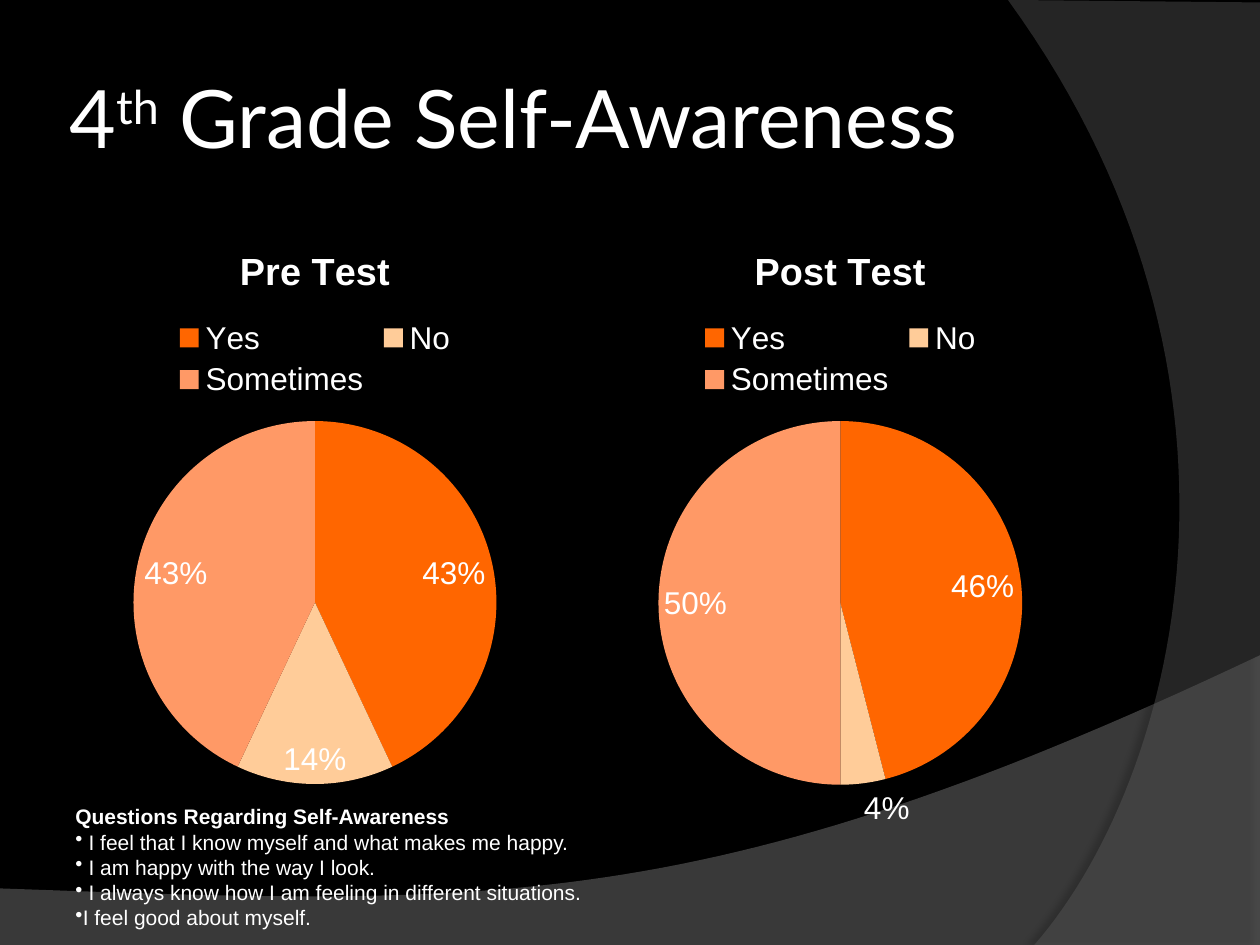
from lxml import etree
from pptx import Presentation
from pptx.chart.data import CategoryChartData
from pptx.dml.color import RGBColor
from pptx.enum.chart import XL_CHART_TYPE, XL_LABEL_POSITION, XL_LEGEND_POSITION
from pptx.enum.text import MSO_ANCHOR, MSO_AUTO_SIZE, PP_ALIGN
from pptx.oxml import parse_xml
from pptx.oxml.ns import nsdecls, qn
from pptx.util import Cm, Pt

PIE = XL_CHART_TYPE.PIE
BEST_FIT = XL_LABEL_POSITION.BEST_FIT
LEGEND_TOP = XL_LEGEND_POSITION.TOP
MIDDLE = MSO_ANCHOR.MIDDLE
GROW = MSO_AUTO_SIZE.SHAPE_TO_FIT_TEXT
LEFT = PP_ALIGN.LEFT

THEME = {
    "background": RGBColor(0x00, 0x00, 0x00),
    "text": RGBColor(0xFF, 0xFF, 0xFF),
    "wave": RGBColor(0x7F, 0x7F, 0x7F),
    "arc": RGBColor(0x5E, 0x5E, 0x5E),
    "slices": [RGBColor(0xFF, 0x66, 0x00), RGBColor(0xFF, 0xCC, 0x99), RGBColor(0xFF, 0x99, 0x66)],
    "title_font": "Lato",
    "body_font": "Arial",
    "title_size": Pt(46),
    "chart_title_size": Pt(21.6),
    "chart_size": Pt(18),
    "question_size": Pt(12),
}
CURVE_STEPS = 60


def style_font(font, name, size, bold=False):
    font.name = name
    font.size = size
    font.bold = bold
    font.color.rgb = THEME["text"]


def add_backdrop(page, corners, controls, color, opacity, shadow):
    start, first, second, end = corners[-1], *controls
    points = list(corners)
    for step in range(1, CURVE_STEPS + 1):
        t = step / CURVE_STEPS
        weights = ((1 - t) ** 3, 3 * t * (1 - t) ** 2, 3 * t ** 2 * (1 - t), t ** 3)
        points.append(tuple(
            sum(weight * value for weight, value in zip(weights, axis))
            for axis in zip(start, first, second, end)
        ))
    points = [(Cm(x), Cm(y)) for x, y in points]
    builder = page.shapes.build_freeform(*points[0])
    builder.add_line_segments(points[1:], close=True)
    shape = builder.convert_to_shape()
    shape.fill.solid()
    shape.fill.fore_color.rgb = color
    shape.line.fill.background()
    properties = shape.element.spPr
    color_node = properties.find(qn("a:solidFill"))[0]
    etree.SubElement(color_node, qn("a:alpha"), val=str(opacity * 1000))
    blur, distance, angle, strength = shadow
    properties.append(parse_xml(
        f'<a:effectLst {nsdecls("a")}>'
        f'<a:outerShdw blurRad="{Pt(blur)}" dist="{Pt(distance)}" dir="{angle * 60000}" '
        f'algn="ctr" rotWithShape="0"><a:srgbClr val="000000">'
        f'<a:alpha val="{strength * 1000}"/></a:srgbClr></a:outerShdw></a:effectLst>'
    ))


deck = Presentation()
deck.slide_width = Cm(25.4)
deck.slide_height = Cm(19.05)
page = deck.slides.add_slide(deck.slide_layouts[5])
page.background.fill.solid()
page.background.fill.fore_color.rgb = THEME["background"]

add_backdrop(
    page,
    [(0, 17.91), (0, 19.05), (25.4, 19.05), (25.4, 13.21)],
    [(14.2, 18.52), (9.93, 18.26), (0, 17.91)],
    THEME["wave"], 45, (4, 3.5, 270, 35),
)
add_backdrop(
    page,
    [(25.4, 0.05), (25.4, 19.05), (20.85, 19.05)],
    [(23.75, 15.72), (25.86, 7.62), (20.32, 0)],
    THEME["arc"], 40, (4, 4, 180, 45),
)

title = page.shapes.title
page.shapes.element.append(title.element)
title.left, title.top, title.width, title.height = Cm(1.27), Cm(0.76), Cm(20.75), Cm(3.18)
frame = title.text_frame
frame.vertical_anchor = MIDDLE
frame.margin_left = frame.margin_right = Cm(0.13)
frame.margin_top = frame.margin_bottom = Cm(0.13)
para = frame.paragraphs[0]
para.alignment = LEFT
for words, baseline in [("4", 0), ("th", 30), (" Grade Self-Awareness", 0)]:
    span = para.add_run()
    span.text = words
    style_font(span.font, THEME["title_font"], THEME["title_size"])
    if baseline:
        span.font._element.set("baseline", str(baseline * 1000))

results = [("Pre Test", (43, 14, 43), 1.27), ("Post Test", (46, 4, 50), 11.86)]
for name, values, left in results:
    data = CategoryChartData()
    data.categories = ["Yes", "No", "Sometimes"]
    data.add_series(name, values)
    chart = page.shapes.add_chart(PIE, Cm(left), Cm(4.45), Cm(10.16), Cm(12.57), data).chart
    style_font(chart.font, THEME["body_font"], THEME["chart_size"])
    chart.has_title = True
    span = chart.chart_title.text_frame.paragraphs[0].add_run()
    span.text = name
    style_font(span.font, THEME["body_font"], THEME["chart_title_size"], True)
    chart.has_legend = True
    chart.legend.position = LEGEND_TOP
    chart.legend.include_in_layout = False
    plot = chart.plots[0]
    plot.vary_by_categories = True
    for index, color in enumerate(THEME["slices"]):
        fill = plot.series[0].points[index].format.fill
        fill.solid()
        fill.fore_color.rgb = color
    plot.has_data_labels = True
    labels = plot.data_labels
    labels.show_value = False
    labels.show_percentage = True
    labels.number_format = "0%"
    labels.number_format_is_linked = False
    labels.position = BEST_FIT
    style_font(labels.font, THEME["body_font"], THEME["chart_size"])

box = page.shapes.add_textbox(Cm(1.27), Cm(16.08), Cm(22.23), Cm(2.82))
frame = box.text_frame
frame.word_wrap = True
frame.auto_size = GROW
questions = [
    "Questions Regarding Self-Awareness",
    " I feel that I know myself and what makes me happy.",
    " I am happy with the way I look.",
    " I always know how I am feeling in different situations.",
    "I feel good about myself.",
]
for index, words in enumerate(questions):
    para = frame.add_paragraph() if index else frame.paragraphs[0]
    span = para.add_run()
    span.text = words
    style_font(span.font, THEME["body_font"], THEME["question_size"], index == 0)
    if index:
        bullet = etree.SubElement(para._p.get_or_add_pPr(), qn("a:buChar"))
        bullet.set("char", "•")

deck.save("out.pptx")
